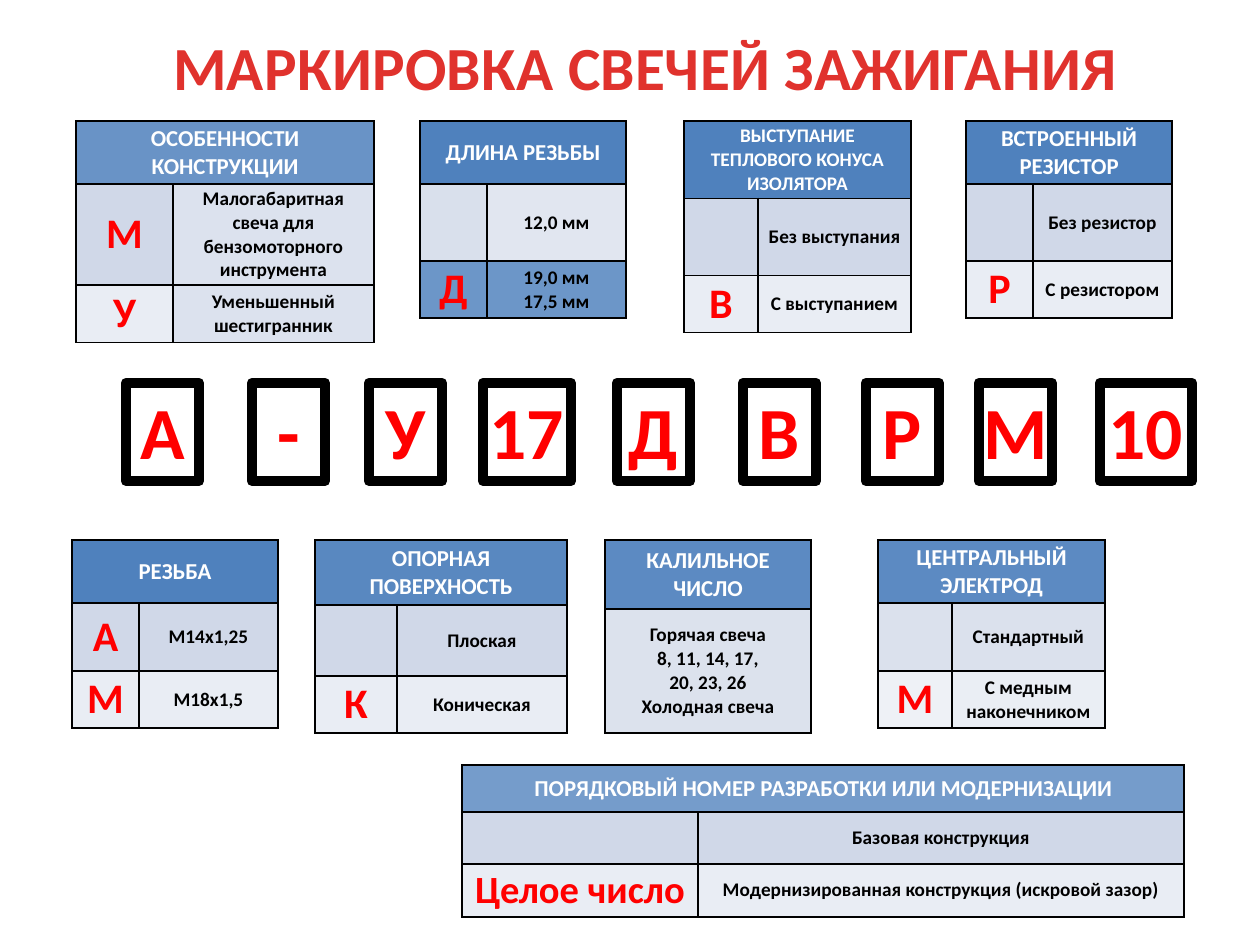
from dataclasses import dataclass, field

from lxml.etree import SubElement
from pptx import Presentation
from pptx.dml.color import RGBColor as RGB
from pptx.enum.shapes import MSO_SHAPE as SHAPE
from pptx.enum.text import MSO_ANCHOR as ANCHOR, PP_ALIGN as ALIGN
from pptx.oxml.ns import qn
from pptx.util import Emu, Pt

PX = 914400 / 126


@dataclass(frozen=True)
class Theme:
    """Colours, font and type sizes of the slide."""
    font: str = "Calibri"
    head: str = "4F81BD"
    band: str = "D0D8E8"
    pale: str = "E9EDF4"
    white: str = "FFFFFF"
    black: str = "000000"
    red: str = "FF0000"
    outline: str = "D73A36"
    title_from: str = "E0322D"
    title_to: str = "A2201C"
    title_size: int = 35
    code_size: int = 42
    letter_size: int = 24
    head_size: int = 13
    body_size: int = 11


T = Theme()


@dataclass
class Legend:
    """Content and geometry of one legend table."""
    left: int
    top: int
    cols: list
    heights: list
    title: str
    rows: list
    fills: dict = field(default_factory=dict)
    head_size: int = T.head_size
    letter_size: int = T.letter_size


LEGENDS = [
    Legend(76, 121, [97, 201], [63, 74, 57], "ОСОБЕННОСТИ КОНСТРУКЦИИ",
           [["М", "Малогабаритная свеча для бензомоторного инструмента"],
            ["У", "Уменьшенный шестигранник"]],
           {(0, 0): (T.head, 85), (1, 1): (T.band, 73), (2, 1): (T.band, 73)}),
    Legend(420, 121, [67, 139], [63, 77, 57], "ДЛИНА РЕЗЬБЫ",
           [["", "12,0 мм"], ["Д", "19,0 мм\n17,5 мм"]],
           {(1, 0): (T.band, 79), (1, 1): (T.band, 62),
            (2, 0): (T.head, 83), (2, 1): (T.head, 83)}),
    Legend(684, 121, [74, 153], [63, 77, 57], "ВЫСТУПАНИЕ ТЕПЛОВОГО КОНУСА ИЗОЛЯТОРА",
           [["", "Без выступания"], ["В", "С выступанием"]], head_size=T.body_size),
    Legend(966, 121, [67, 139], [63, 77, 57], "ВСТРОЕННЫЙ РЕЗИСТОР",
           [["", "Без резистор"], ["Р", "С резистором"]]),
    Legend(72, 540, [67, 139], [63, 68, 57], "РЕЗЬБА",
           [["А", "М14x1,25"], ["М", "М18x1,5"]]),
    Legend(315, 540, [82, 170], [65, 71, 57], "ОПОРНАЯ ПОВЕРХНОСТЬ",
           [["", "Плоская"], ["К", "Коническая"]], {(0, 0): (T.head, 94)}),
    Legend(605, 540, [206], [69, 124], "КАЛИЛЬНОЕ ЧИСЛО",
           [["Горячая свеча\n8, 11, 14, 17,\n20, 23, 26\nХолодная свеча"]],
           {(0, 0): (T.head, 92), (1, 0): (T.band, 74)}),
    Legend(878, 540, [74, 153], [63, 68, 57], "ЦЕНТРАЛЬНЫЙ ЭЛЕКТРОД",
           [["", "Стандартный"], ["М", "С медным наконечником"]],
           {(0, 0): (T.head, 92), (1, 0): (T.band, 76), (1, 1): (T.band, 76),
            (2, 0): (T.pale, 74), (2, 1): (T.pale, 92)}),
    Legend(462, 765, [236, 486], [47, 52, 52],
           "ПОРЯДКОВЫЙ НОМЕР РАЗРАБОТКИ ИЛИ МОДЕРНИЗАЦИИ",
           [["", "Базовая конструкция"],
            ["Целое число", "Модернизированная конструкция (искровой зазор)"]],
           {(0, 0): (T.head, 78)}, letter_size=22),
]

CODE = [("А", 126, 73), ("-", 252, 73), ("У", 369, 73), ("17", 483, 88),
        ("Д", 617, 73), ("В", 743, 73), ("Р", 866, 73), ("М", 979, 73), ("10", 1100, 92)]


def px(n):
    """Convert pixels to EMU."""
    return Emu(round(n * PX))


def rgb(colour):
    """Return a python-pptx colour from a hex string."""
    return RGB.from_string(colour)


def set_margins(o):
    """Give a cell or text frame the common narrow margins."""
    o.margin_left = o.margin_right = px(5)
    o.margin_top = o.margin_bottom = px(3)


def write(tf, text, size, colour, align=ALIGN.CENTER):
    """Write bold lines of text, one paragraph each."""
    for i, line in enumerate(text.split("\n")):
        p = tf.add_paragraph() if i else tf.paragraphs[0]
        p.add_run().text = line
        p.alignment = align
        p.font.name, p.font.size, p.font.bold = T.font, Pt(size), True
        p.font.color.rgb = rgb(colour)


def add_solid(parent, colour):
    """Append a solid fill element and return its colour element."""
    return SubElement(SubElement(parent, qn("a:solidFill")), qn("a:srgbClr"), val=colour)


def style_cell(cell, colour, alpha):
    """Set the borders, fill and margins of a cell."""
    pr = cell._tc.get_or_add_tcPr()
    for side in ("lnL", "lnR", "lnT", "lnB"):
        add_solid(SubElement(pr, qn("a:" + side), w=str(Pt(1))), T.black)
    clr = add_solid(pr, colour)
    if alpha < 100:
        SubElement(clr, qn("a:alpha"), val=str(alpha * 1000))
    cell.vertical_anchor = ANCHOR.MIDDLE
    set_margins(cell)


def add_legend(s, spec):
    """Add one legend table with a header across all columns."""
    n_rows, n_cols = len(spec.heights), len(spec.cols)
    table = s.shapes.add_table(n_rows, n_cols, px(spec.left), px(spec.top),
                               px(sum(spec.cols)), px(sum(spec.heights))).table
    table.horz_banding = False
    for col, width in zip(table.columns, spec.cols):
        col.width = px(width)
    for row, height in zip(table.rows, spec.heights):
        row.height = px(height)
    for r in range(n_rows):
        for c in range(n_cols):
            default = (T.head, T.band, T.pale)[r], 100
            style_cell(table.cell(r, c), *spec.fills.get((r, c), default))
    if n_cols > 1:
        table.cell(0, 0).merge(table.cell(0, n_cols - 1))
    write(table.cell(0, 0).text_frame, spec.title, spec.head_size, T.white)
    for r, texts in enumerate(spec.rows, 1):
        for c, text in enumerate(texts):
            is_letter = n_cols > 1 and c == 0
            size, colour = (spec.letter_size, T.red) if is_letter else (T.body_size, T.black)
            if text:
                write(table.cell(r, c).text_frame, text, size, colour)


def add_title(s):
    """Add the slide title with its gradient fill."""
    tf = s.shapes.add_textbox(px(168), px(26), px(961), px(83)).text_frame
    tf.word_wrap = True
    set_margins(tf)
    write(tf, "МАРКИРОВКА СВЕЧЕЙ ЗАЖИГАНИЯ", T.title_size, T.title_from, ALIGN.LEFT)
    font = tf.paragraphs[0].runs[0].font
    font.fill.gradient()
    font.fill.gradient_angle = 270
    stops = [(0.25, T.title_from), (1, T.title_to)]
    for stop, (position, colour) in zip(font.fill.gradient_stops, stops):
        stop.position = position
        stop.color.rgb = rgb(colour)
    font._element.set("spc", "20")


def add_code_box(s, text, left, width):
    """Add one framed character group of the marking code."""
    sp = s.shapes.add_shape(SHAPE.RECTANGLE, px(left), px(383), px(width), px(98))
    sp.shadow.inherit = False
    sp.fill.solid()
    sp.fill.fore_color.rgb = rgb(T.white)
    sp.line.color.rgb = rgb(T.black)
    sp.line.width = Pt(6)
    tf = sp.text_frame
    tf.word_wrap = False
    tf.vertical_anchor = ANCHOR.TOP
    set_margins(tf)
    write(tf, text, T.code_size, T.red)
    r_pr = tf.paragraphs[0].runs[0].font._element
    add_solid(SubElement(r_pr, qn("a:ln"), w=str(Pt(1.42))), T.outline)
    add_solid(r_pr, T.red)


def main():
    """Build and save the slide."""
    prs = Presentation()
    prs.slide_width, prs.slide_height = px(1260), px(945)
    s = prs.slides.add_slide(prs.slide_layouts[6])
    for spec in LEGENDS:
        add_legend(s, spec)
    add_title(s)
    for text, left, width in CODE:
        add_code_box(s, text, left, width)
    prs.save("out.pptx")


if __name__ == "__main__":
    main()
